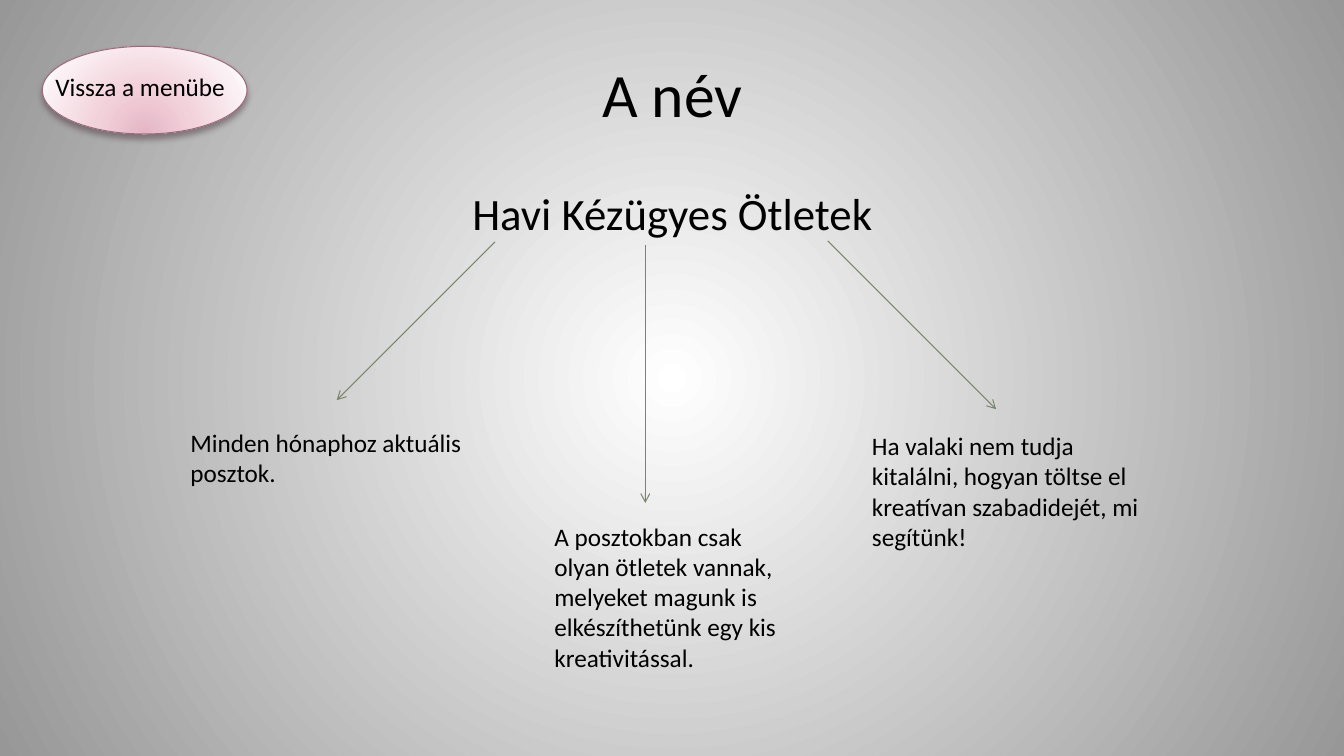
from lxml.etree import SubElement
from pptx import Presentation
from pptx.dml.color import RGBColor
from pptx.enum.shapes import MSO_CONNECTOR, MSO_SHAPE
from pptx.enum.text import MSO_ANCHOR, MSO_AUTO_SIZE, PP_ALIGN
from pptx.oxml.ns import qn
from pptx.util import Inches, Pt

BLACK = RGBColor(0x00, 0x00, 0x00)
WHITE = RGBColor(0xFF, 0xFF, 0xFF)
GRAY = RGBColor(0x97, 0x97, 0x97)
OLIVE = RGBColor(0x7A, 0x86, 0x6C)
ROSE = RGBColor(0xE5, 0xB6, 0xC5)
ROSE_LIGHT = RGBColor(0xF2, 0xD1, 0xDB)
ROSE_PALE = RGBColor(0xFB, 0xF1, 0xF4)
ROSE_WHITE = RGBColor(0xFE, 0xF9, 0xFB)
ROSE_EDGE = RGBColor(0x9B, 0x6B, 0x7B)
ROSE_SHADOW = RGBColor(0x4A, 0x33, 0x3A)


def add_node(parent, tag, **attrs):
    return SubElement(parent, qn(tag), {k: str(v) for k, v in attrs.items()})


def set_radial(fill, element, stops, top, bottom):
    fill.gradient()
    grad = next(element.iter(qn("a:gradFill")))
    for child in list(grad):
        grad.remove(child)
    stop_list = add_node(grad, "a:gsLst")
    for percent, color in stops:
        stop = add_node(stop_list, "a:gs", pos=percent * 1000)
        add_node(stop, "a:srgbClr", val=color)
    circle = add_node(grad, "a:path", path="circle")
    add_node(circle, "a:fillToRect", l=50000, t=top * 1000, r=50000, b=bottom * 1000)


class SlideBuilder:
    font = "Calibri"
    line_width = Pt(0.75)

    def __init__(self, slide):
        self.s = slide

    def background(self, stops):
        set_radial(self.s.background.fill, self.s.element, stops, 50, 50)

    def text(self, text, x, y, w, h, size=18, align=PP_ALIGN.LEFT,
             anchor=MSO_ANCHOR.TOP, fit=MSO_AUTO_SIZE.SHAPE_TO_FIT_TEXT):
        sp = self.s.shapes.add_textbox(Inches(x), Inches(y), Inches(w), Inches(h))
        tf = sp.text_frame
        tf.word_wrap = True
        tf.auto_size = fit
        tf.vertical_anchor = anchor
        p = tf.paragraphs[0]
        p.alignment = align
        r = p.add_run()
        r.text = text
        r.font.name = self.font
        r.font.size = Pt(size)
        r.font.color.rgb = BLACK

    def heading(self, text, y, h, size, anchor):
        self.text(text, 0.67, y, 12, h, size=size, align=PP_ALIGN.CENTER,
                  anchor=anchor, fit=MSO_AUTO_SIZE.NONE)

    def arrow(self, x1, y1, x2, y2):
        c = self.s.shapes.add_connector(
            MSO_CONNECTOR.STRAIGHT, Inches(x1), Inches(y1), Inches(x2), Inches(y2))
        c.line.color.rgb = OLIVE
        c.line.width = self.line_width
        add_node(c.line._get_or_add_ln(), "a:tailEnd", type="arrow")
        add_node(c._element.spPr, "a:effectLst")

    def button(self, x, y, w, h, stops):
        sp = self.s.shapes.add_shape(
            MSO_SHAPE.OVAL, Inches(x), Inches(y), Inches(w), Inches(h))
        set_radial(sp.fill, sp._element, stops, 130, -30)
        sp.line.color.rgb = ROSE_EDGE
        sp.line.width = self.line_width
        sp.shadow.inherit = False
        effects = sp._element.spPr.find(qn("a:effectLst"))
        shadow = add_node(effects, "a:outerShdw", blurRad=Pt(4.5), dist=Pt(3),
                          dir=90 * 60000, rotWithShape=0)
        color = add_node(shadow, "a:srgbClr", val=ROSE_SHADOW)
        add_node(color, "a:alpha", val=48000)


def main():
    prs = Presentation()
    prs.slide_width = Inches(13.33)
    prs.slide_height = Inches(7.5)
    b = SlideBuilder(prs.slides.add_slide(prs.slide_layouts[6]))

    b.background([(0, WHITE), (100, GRAY)])
    b.heading("A név", 0.3, 1.25, 44, MSO_ANCHOR.MIDDLE)
    b.heading("Havi Kézügyes Ötletek", 1.79, 4.95, 32, MSO_ANCHOR.TOP)

    for ends in [(4.91, 2.4, 3.34, 3.97), (6.4, 2.43, 6.4, 4.99), (8.21, 2.39, 9.88, 4.06)]:
        b.arrow(*ends)

    b.text("Minden hónaphoz aktuális posztok.", 1.79, 4.19, 3.09, 0.71)
    b.text("A posztokban csak olyan ötletek vannak, melyeket magunk is "
           "elkészíthetünk egy kis kreativitással.", 5.4, 5.12, 2.58, 1.62)
    b.text("Ha valaki nem tudja kitalálni, hogyan töltse el kreatívan "
           "szabadidejét, mi segítünk!", 8.55, 4.22, 2.85, 1.31)

    b.button(0.42, 0.46, 2.03, 0.87,
             [(0, ROSE), (43, ROSE_LIGHT), (93, ROSE_PALE), (100, ROSE_WHITE)])
    b.text("Vissza a menübe", 0.45, 0.66, 2.57, 0.4)

    prs.save("out.pptx")


if __name__ == "__main__":
    main()
